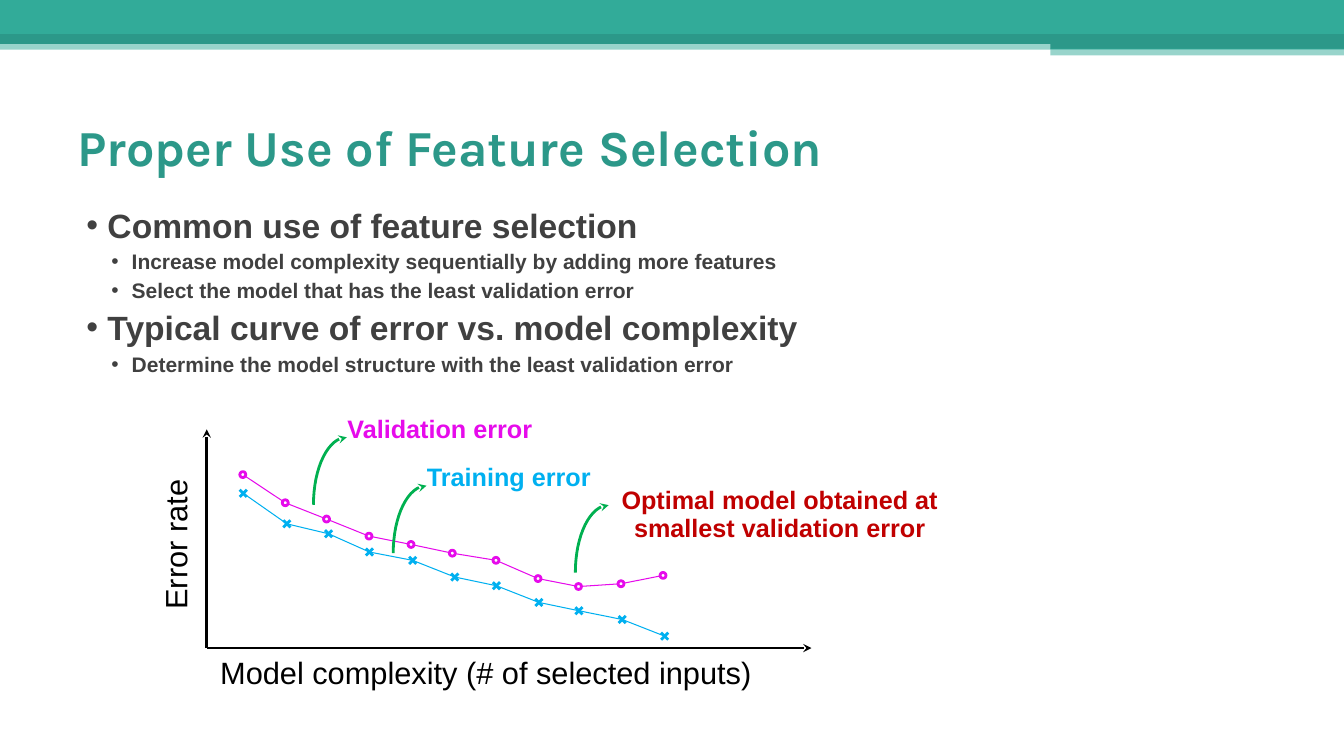
import math
import pptx
import pptx.dml.color
import pptx.enum.shapes
import pptx.enum.text
import pptx.oxml
import pptx.oxml.ns
import pptx.util
from pptx.util import Cm, Pt

SHAPE = pptx.enum.shapes.MSO_SHAPE
ALIGN = pptx.enum.text.PP_ALIGN
ANCHOR = pptx.enum.text.MSO_ANCHOR
TEAL, DARK_TEAL, GREY, BLACK = "32AB99", "2C9889", "404040", "000000"
MAGENTA, BLUE, GREEN, RED = "E60BEB", "00B0F0", "00B050", "C00000"

# All lengths are in centimetres.
WIDTH, HEIGHT = 33.87, 19.05
BARS = [  # left, top, width, height, colour, opacity in percent
    (0, 1.02, WIDTH, 0.23, TEAL, 50),
    (0, 0, WIDTH, 0.86, TEAL, 100),
    (0, 0.86, WIDTH, 0.25, DARK_TEAL, 100),
    (26.47, 0.99, 7.4, 0.25, DARK_TEAL, 100),
    (26.47, 1.22, 7.4, 0.18, TEAL, 50),
]
TITLE = "Proper Use of Feature Selection"
BULLETS = [  # level, text
    (0, "Common use of feature selection"),
    (1, "Increase model complexity sequentially by adding more features"),
    (1, "Select the model that has the least validation error"),
    (0, "Typical curve of error vs. model complexity"),
    (1, "Determine the model structure with the least validation error"),
]
BULLET_STYLES = [(24, 0.76, 0.53), (15, 1.37, 0.51)]  # size, margin, hanging
LABELS = [  # left, top, width, height, lines, size, colour, bold, rotation
    (5.21, 16.64, 14.07, 0.89, ["Model complexity (# of selected inputs)"], 22, BLACK, False, 0),
    (2.64, 13.28, 3.84, 0.89, ["Error rate"], 22, BLACK, False, 270),
    (8.48, 10.52, 5.21, 0.79, ["Validation error"], 18, MAGENTA, True, 0),
    (10.49, 11.73, 4.67, 0.79, ["Training error"], 18, BLUE, True, 0),
    (15.37, 12.32, 8.56, 1.5, ["Optimal model obtained at", "smallest validation error"], 18, RED, True, 0),
]
ORIGIN, AXIS_TIPS = (5.21, 16.33), [(5.21, 10.82), (20.45, 16.33)]
VALIDATION = [(6.12, 11.96), (7.19, 12.67), (8.23, 13.08), (9.3, 13.51),
              (10.36, 13.72), (11.4, 13.94), (12.5, 14.12), (13.56, 14.58),
              (14.58, 14.78), (15.65, 14.71), (16.71, 14.5)]
TRAINING = [(6.13, 12.43), (7.23, 13.2), (8.28, 13.45), (9.31, 13.91),
            (10.4, 14.12), (11.46, 14.54), (12.51, 14.76), (13.58, 15.18),
            (14.59, 15.39), (15.68, 15.61), (16.75, 16.03)]
CIRCLE, CROSS = 0.15, 0.18
POINTERS = [(7.9, 11.02), (9.91, 12.24), (14.5, 12.73)]  # left, top
POINTER_WIDTH, POINTER_HEIGHT, POINTER_STEPS = 0.84, 1.7, 16


def rgb(colour):
    return pptx.dml.color.RGBColor.from_string(colour)


def add_xml(parent, tag, **attributes):
    child = pptx.oxml.parse_xml(f"<a:{tag} {pptx.oxml.ns.nsdecls('a')}/>")
    for name, value in attributes.items():
        child.set(name, str(value))
    parent.append(child)
    return child


def style_line(line, colour, width, arrow=False):
    line.color.rgb = rgb(colour)
    line.width = Pt(width)
    if arrow:
        add_xml(line._get_or_add_ln(), "tailEnd", type="stealth")


def add_line(page, start, end, colour, width, arrow=False):
    link = page.shapes.add_connector(
        pptx.enum.shapes.MSO_CONNECTOR.STRAIGHT, *map(Cm, start + end))
    style_line(link.line, colour, width, arrow)
    add_xml(link._element.spPr, "effectLst")


def add_bar(page, left, top, width, height, colour, opacity):
    bar = page.shapes.add_shape(SHAPE.RECTANGLE, *map(Cm, (left, top, width, height)))
    bar.shadow.inherit = False
    bar.fill.solid()
    bar.fill.fore_color.rgb = rgb(colour)
    bar.line.fill.background()
    if opacity < 100:
        fill = bar._element.spPr.find(pptx.oxml.ns.qn("a:solidFill"))
        add_xml(fill[0], "alpha", val=opacity * 1000)


def add_box(page, left, top, width, height, wrap=True):
    box = page.shapes.add_textbox(*map(Cm, (left, top, width, height)))
    box.text_frame.word_wrap = wrap
    return box


def fill_paragraphs(frame, lines):
    """Put one line in each paragraph and yield the paragraphs."""
    for number, line in enumerate(lines):
        para = frame.add_paragraph() if number else frame.paragraphs[0]
        para.text = line
        yield para


def set_font(para, name, size, colour, bold):
    para.font.name, para.font.size, para.font.bold = name, Pt(size), bold
    para.font.color.rgb = rgb(colour)


def add_title(page):
    frame = add_box(page, 1.7, 2.59, 30.48, 2.18).text_frame
    frame.vertical_anchor = ANCHOR.MIDDLE
    for para in fill_paragraphs(frame, [TITLE]):
        set_font(para, "Karla", 36, DARK_TEAL, True)


def add_bullets(page):
    frame = add_box(page, 1.7, 5.03, 30.48, 12.22).text_frame
    paras = fill_paragraphs(frame, [text for _, text in BULLETS])
    for number, (para, (level, _)) in enumerate(zip(paras, BULLETS)):
        size, margin, hanging = BULLET_STYLES[level]
        para.level = level
        props = para._p.get_or_add_pPr()
        props.set("marL", str(Cm(margin)))
        props.set("indent", str(-Cm(hanging)))
        add_xml(add_xml(props, "buClr"), "srgbClr", val=GREY)
        add_xml(props, "buFont", typeface="Arial")
        add_xml(props, "buChar", char="•")
        para.space_before = Pt(2.8 if number else 0)
        set_font(para, "Arial", size, GREY, True)


def add_label(page, left, top, width, height, lines, size, colour, bold, rotation):
    box = add_box(page, left, top, width, height, wrap=False)
    box.rotation = rotation
    for number, para in enumerate(fill_paragraphs(box.text_frame, lines)):
        para.alignment = ALIGN.CENTER
        para.line_spacing = 0.65
        para.space_before = Pt(0.33 * size if number else 0)
        set_font(para, "Arial", size, colour, bold)


def add_circle(page, x, y):
    ring = page.shapes.add_shape(
        SHAPE.OVAL, Cm(x - CIRCLE / 2), Cm(y - CIRCLE / 2), Cm(CIRCLE), Cm(CIRCLE))
    ring.shadow.inherit = False
    ring.fill.background()
    style_line(ring.line, MAGENTA, 2)


def add_cross(page, x, y):
    half = CROSS / 2
    for rise in (half, -half):
        add_line(page, (x - half, y - rise), (x + half, y + rise), BLUE, 2)


def add_curve(page, points, colour, add_marker, gap):
    """Join the points, leaving a gap around each marker."""
    for (x1, y1), (x2, y2) in zip(points, points[1:]):
        share = gap / math.hypot(x2 - x1, y2 - y1)
        dx, dy = (x2 - x1) * share, (y2 - y1) * share
        add_line(page, (x1 + dx, y1 + dy), (x2 - dx, y2 - dy), colour, 0.75)
    for x, y in points:
        add_marker(page, x, y)


def add_pointer(page, left, top):
    """Draw a quarter ellipse that rises to the right and ends in an arrowhead."""
    angles = [math.pi / 2 * step / POINTER_STEPS for step in range(POINTER_STEPS + 1)]
    points = [(Cm(left + POINTER_WIDTH * (1 - math.cos(angle))),
               Cm(top + POINTER_HEIGHT * (1 - math.sin(angle)))) for angle in angles]
    builder = page.shapes.build_freeform(*points[0])
    builder.add_line_segments(points[1:], close=False)
    pointer = builder.convert_to_shape()
    pointer.shadow.inherit = False
    pointer.fill.background()
    style_line(pointer.line, GREEN, 2, arrow=True)


def main():
    deck = pptx.Presentation()
    deck.slide_width, deck.slide_height = Cm(WIDTH), Cm(HEIGHT)
    page = deck.slides.add_slide(deck.slide_layouts[6])
    for bar in BARS:
        add_bar(page, *bar)
    add_title(page)
    add_bullets(page)
    for tip in AXIS_TIPS:
        add_line(page, ORIGIN, tip, BLACK, 2, arrow=True)
    add_curve(page, VALIDATION, MAGENTA, add_circle, CIRCLE / 2)
    add_curve(page, TRAINING, BLUE, add_cross, 0)
    for pointer in POINTERS:
        add_pointer(page, *pointer)
    for label in LABELS:
        add_label(page, *label)
    deck.save("out.pptx")


if __name__ == "__main__":
    main()
